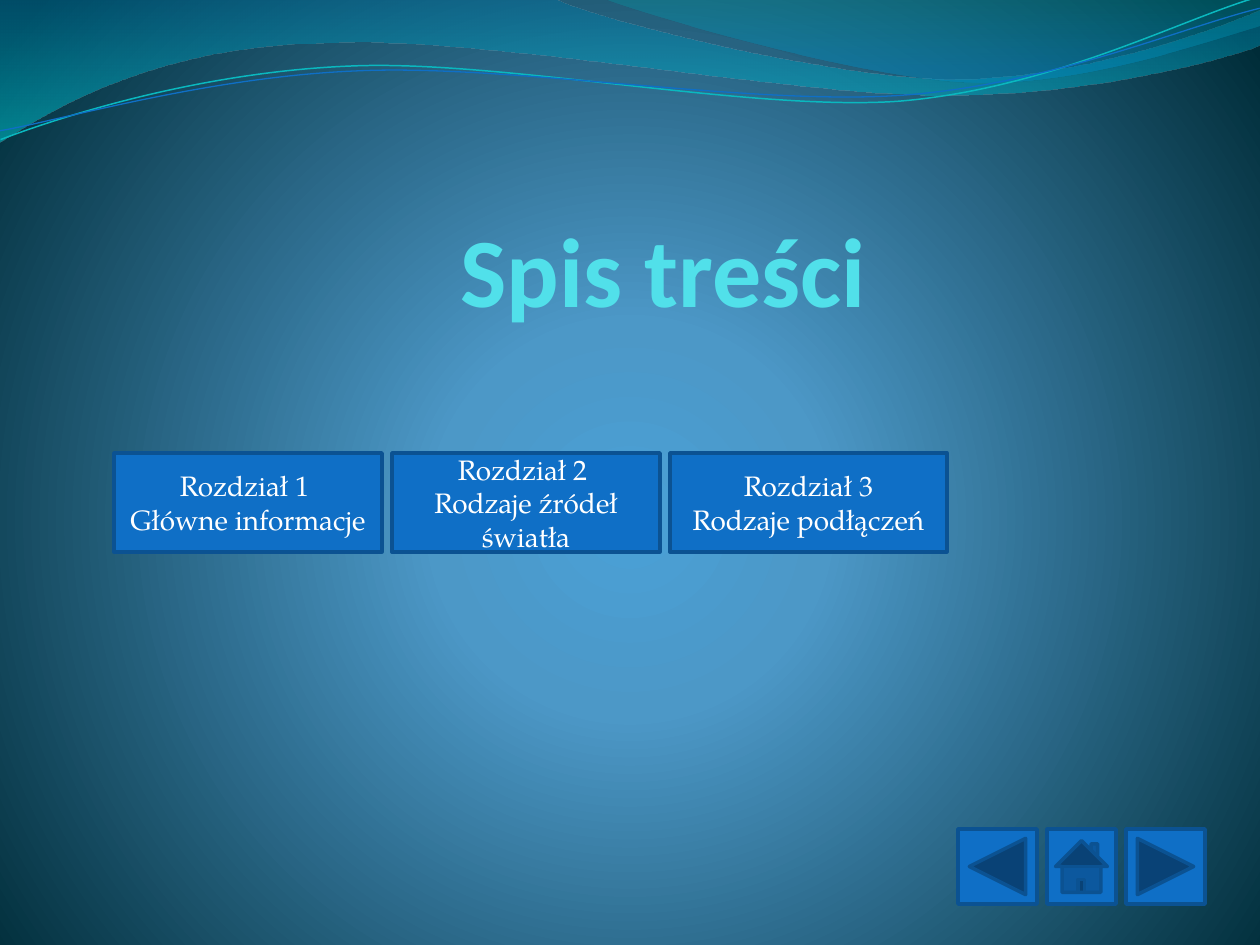
"""Builds the table-of-contents slide with chapter and navigation buttons."""
from lxml import etree
from pptx import Presentation
from pptx.dml.color import RGBColor
from pptx.enum.shapes import MSO_SHAPE
from pptx.enum.text import MSO_ANCHOR, MSO_AUTO_SIZE, PP_ALIGN
from pptx.oxml.ns import qn
from pptx.util import Emu, Pt

PX = 914400 / 126
RECTANGLE = MSO_SHAPE.RECTANGLE
BACK = MSO_SHAPE.ACTION_BUTTON_BACK_OR_PREVIOUS
HOME = MSO_SHAPE.ACTION_BUTTON_HOME
FORWARD = MSO_SHAPE.ACTION_BUTTON_FORWARD_OR_NEXT
CENTER, RIGHT = PP_ALIGN.CENTER, PP_ALIGN.RIGHT
MIDDLE, BOTTOM = MSO_ANCHOR.MIDDLE, MSO_ANCHOR.BOTTOM

BLUE = RGBColor(0x0F, 0x6F, 0xC6)
DARK_BLUE = RGBColor(0x0B, 0x52, 0x92)
TURQUOISE = RGBColor(0x0A, 0xB8, 0xBF)
AQUA = RGBColor(0x51, 0xE0, 0xEA)
WHITE = RGBColor(0xFF, 0xFF, 0xFF)
GLOW_CENTER = RGBColor(0x4A, 0xA0, 0xD6)
GLOW_MIDDLE = RGBColor(0x4C, 0x98, 0xC7)
GLOW_EDGE = RGBColor(0x00, 0x2C, 0x38)
WAVE_BLUE = RGBColor(0x00, 0x74, 0xA1)
WAVE_CYAN = RGBColor(0x00, 0xC6, 0xCF)
CREST_TEAL = RGBColor(0x00, 0xA1, 0xA9)
CREST_BLUE = RGBColor(0x00, 0x8B, 0xBF)

STRAND_TILT = 357.3
LEFT_WAVE = [
    (0, 0), (554, -1), (600, 21, 837, 79, 955, 79), (1075, 79, 1207, 33, 1260, 11),
    (1261, 45), (1239, 55, 1096, 96, 940, 95), (784, 95, 481, 35, 324, 43),
    (163, 45, 58, 105, -1, 142), (0, 0),
]
RIGHT_CREST = [
    (604, -1), (641, 14, 859, 78, 969, 82), (1079, 87, 1211, 40, 1260, 26), (1260, 0),
    (604, -1),
]
TURQUOISE_STRAND = [
    (-2, 110), (59, 90, 199, 52, 350, 53), (499, 53, 745, 117, 896, 114),
    (1049, 109, 1184, 45, 1260, 27),
]
BLUE_STRAND = [
    (-2, 101), (57, 94, 207, 57, 357, 58), (509, 58, 750, 112, 902, 108),
    (1052, 104, 1188, 52, 1262, 38),
]
CHAPTERS = [
    (268, ["Rozdział 1 ", "Główne informacje"]),
    (268, ["Rozdział 2 ", "Rodzaje źródeł światła"]),
    (277, ["Rozdział 3", "Rodzaje podłączeń"]),
]
NAVIGATION = [(79, BACK), (69, HOME), (79, FORWARD)]


def px(length):
    """Turn pixels into EMU."""
    return Emu(round(length * PX))


def set_gradient(owner, stops, center=None):
    """Give a gradient of (position, colour, opacity) stops, downward or round a center."""
    owner.fill.gradient()
    root = owner.element if hasattr(owner, "element") else owner._cSld
    gradient = root.find(".//" + qn("a:gradFill"))
    for child in list(gradient):
        gradient.remove(child)
    stop_list = etree.SubElement(gradient, qn("a:gsLst"))
    for position, color, opacity in stops:
        stop = etree.SubElement(stop_list, qn("a:gs"), pos=str(position * 1000))
        tint = etree.SubElement(stop, qn("a:srgbClr"), val=str(color))
        if opacity < 100:
            etree.SubElement(tint, qn("a:alpha"), val=str(opacity * 1000))
    if center:
        circle = etree.SubElement(gradient, qn("a:path"), path="circle")
        sides = {side: str(share * 1000) for side, share in zip("ltrb", center)}
        etree.SubElement(circle, qn("a:fillToRect"), **sides)
    else:
        etree.SubElement(gradient, qn("a:lin"), ang="5400000", scaled="1")


def add_outline(slide, outline, closed):
    """Draw line ends (x, y) and Bezier segments (six numbers) as one outline."""
    ends = [(px(segment[-2]), px(segment[-1])) for segment in outline]
    builder = slide.shapes.build_freeform(*ends[0], scale=1.0)
    builder.add_line_segments(ends[1:], close=closed)
    shape = builder.convert_to_shape()
    shape.shadow.inherit = False
    lines = list(shape.element.iter(qn("a:lnTo")))
    for line, segment in zip(lines, outline[1:]):
        if len(segment) == 6:
            line.addprevious(bezier(segment, shape.left, shape.top))
            line.getparent().remove(line)
    return shape


def bezier(segment, left, top):
    """Make a cubic curve relative to its shape's corner."""
    curve = etree.Element(qn("a:cubicBezTo"))
    for x, y in zip(segment[::2], segment[1::2]):
        etree.SubElement(curve, qn("a:pt"), x=str(px(x) - left), y=str(px(y) - top))
    return curve


def add_wave(slide, outline, stops):
    """Add a translucent band."""
    wave = add_outline(slide, outline, True)
    set_gradient(wave, stops)
    wave.line.fill.background()


def add_strand(slide, outline, color, width):
    """Add a thin open curve, slightly tilted."""
    strand = add_outline(slide, outline, False)
    strand.rotation = STRAND_TILT
    strand.fill.background()
    strand.line.color.rgb = color
    strand.line.width = Pt(width)


def write_text(shape, lines, *, size, font, color, align, anchor, bold=False):
    """Write one formatted paragraph per line."""
    frame = shape.text_frame
    frame.text = "\n".join(lines)
    frame.word_wrap = True
    frame.auto_size = MSO_AUTO_SIZE.NONE
    frame.vertical_anchor = anchor
    for paragraph in frame.paragraphs:
        paragraph.alignment = align
        for run in paragraph.runs:
            run.font.size = Pt(size)
            run.font.name = font
            run.font.bold = bold
            run.font.color.rgb = color


def add_title(slide, text):
    """Place and format the title in front of the waves."""
    title = slide.shapes.title
    slide.shapes.element.append(title.element)
    title.left, title.top, title.width, title.height = map(px, (-213, 75, 1082, 252))
    write_text(title, [text], size=56, font="Calibri", color=AQUA,
               align=RIGHT, anchor=BOTTOM, bold=True)
    frame = title.text_frame
    frame.margin_left = frame.margin_top = frame.margin_bottom = 0
    frame.margin_right = px(3)


def add_button(slide, kind, left, top, width, height):
    """Add a blue button."""
    button = slide.shapes.add_shape(kind, px(left), px(top), px(width), px(height))
    button.shadow.inherit = False
    button.fill.solid()
    button.fill.fore_color.rgb = BLUE
    button.line.color.rgb = DARK_BLUE
    button.line.width = Pt(2)
    return button


def add_chapters(slide):
    """Add the row of chapter buttons."""
    left = 114
    for width, lines in CHAPTERS:
        button = add_button(slide, RECTANGLE, left, 453, width, 99)
        write_text(button, lines, size=16, font="TeX Gyre Pagella", color=WHITE,
                   align=CENTER, anchor=MIDDLE)
        left += width + 10


def add_navigation(slide):
    """Add the row of navigation buttons."""
    left = 958
    for width, kind in NAVIGATION:
        add_button(slide, kind, left, 829, width, 75)
        left += width + 10


def main():
    """Build and save the slide."""
    deck = Presentation()
    deck.slide_width, deck.slide_height = px(1260), px(945)
    slide = deck.slides.add_slide(deck.slide_layouts[5])
    set_gradient(slide.background, [(0, GLOW_CENTER, 100), (25, GLOW_MIDDLE, 100),
                                    (100, GLOW_EDGE, 100)], center=(10, 110, 10, 100))
    add_wave(slide, LEFT_WAVE, [(0, WAVE_BLUE, 45), (100, WAVE_CYAN, 55)])
    add_wave(slide, RIGHT_CREST, [(0, CREST_TEAL, 30), (80, CREST_BLUE, 45)])
    add_strand(slide, TURQUOISE_STRAND, TURQUOISE, 0.85)
    add_strand(slide, BLUE_STRAND, BLUE, 0.75)
    add_navigation(slide)
    add_title(slide, "Spis treści")
    add_chapters(slide)
    deck.save("out.pptx")


if __name__ == "__main__":
    main()
